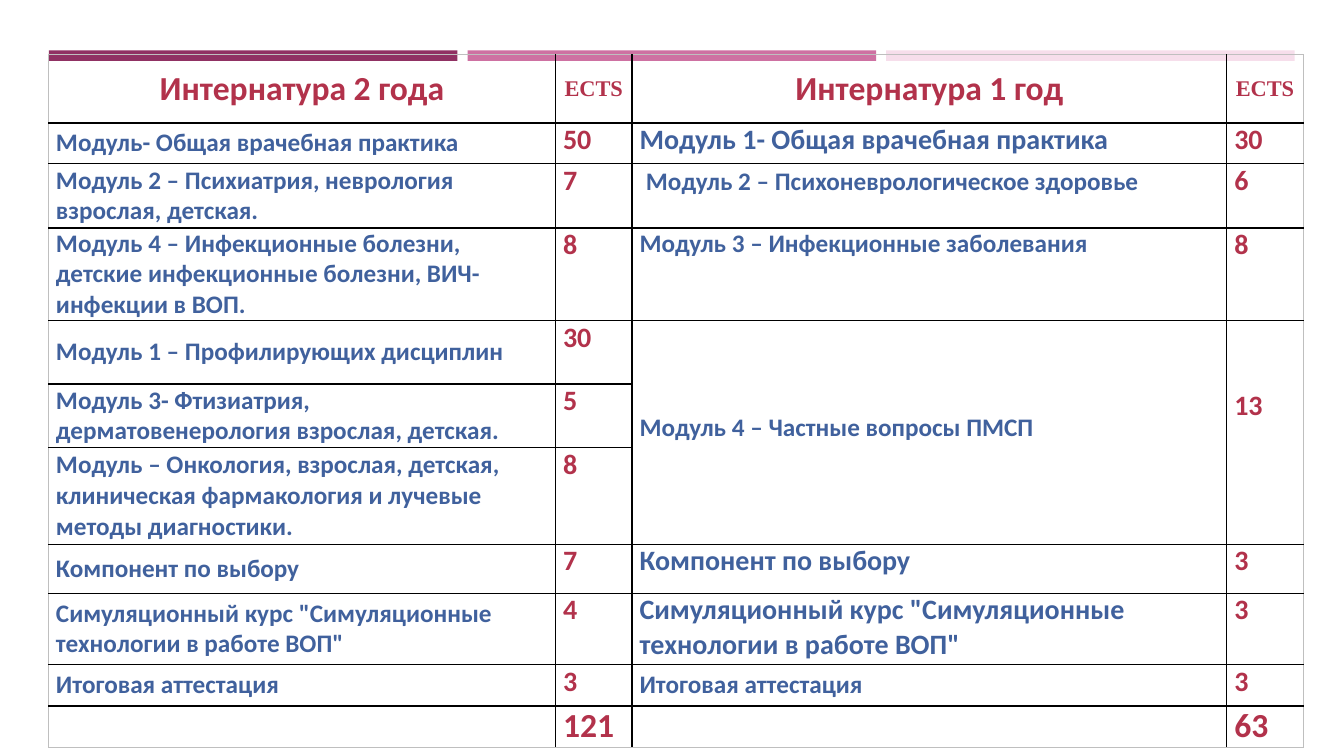
"""Build the slide that compares the two internship plans by ECTS credits."""
from lxml import etree
from pptx import Presentation
from pptx.dml.color import RGBColor
from pptx.enum.shapes import MSO_SHAPE
from pptx.enum.text import MSO_ANCHOR, PP_ALIGN
from pptx.oxml.ns import qn
from pptx.util import Pt

HUES = {"plum": "903163", "rose": "CE71A2", "blush": "F6DEEB",
        "red": "B2324B", "blue": "40619D", "black": "000000", "gray": "BFBFBF"}
COLS = [362.2, 54.7, 424.8, 54.7]
ROWS = [
    (49, "Интернатура 2 года", "ECTS", "Интернатура 1 год", "ECTS"),
    (29, "Модуль- Общая врачебная практика", "50", "Модуль 1- Общая врачебная практика", "30"),
    (46, "Модуль 2 – Психиатрия, неврология взрослая, детская.", "7",
     "Модуль 2 – Психоневрологическое здоровье", "6"),
    (65, "Модуль 4 – Инфекционные болезни, детские инфекционные болезни, ВИЧ-инфекции в ВОП.", "8",
     "Модуль 3 – Инфекционные заболевания", "8"),
    (45.5, "Модуль 1 – Профилирующих дисциплин", "30", "Модуль 4 – Частные вопросы ПМСП", "13"),
    (45.5, "Модуль 3- Фтизиатрия, дерматовенерология взрослая, детская.", "5", "", ""),
    (69, "Модуль – Онкология, взрослая, детская, клиническая фармакология и лучевые методы диагностики.",
     "8", "", ""),
    (35, "Компонент по выбору", "7", "Компонент по выбору", "3"),
    (51, 'Симуляционный курс "Симуляционные технологии в работе ВОП"', "4",
     'Симуляционный курс "Симуляционные технологии в работе ВОП"', "3"),
    (29.5, "Итоговая аттестация", "3", "Итоговая аттестация", "3"),
    (29.5, "", "121", "", "63"),
]
LAST = len(ROWS) - 1
LARGE = (1, 7, 8)


def add_run(para, text, size, hue, face="Calibri"):
    run = para.add_run()
    run.text = text
    run.font.size = Pt(size)
    run.font.bold = True
    run.font.name = face
    run.font.color.rgb = RGBColor.from_string(HUES[hue])


def add_edge(cell, place, side, outer):
    edge = etree.Element(qn(f"a:ln{side}"), w=str(Pt(0.5 if outer else 1)))
    fill = etree.SubElement(edge, qn("a:solidFill"))
    etree.SubElement(fill, qn("a:srgbClr"), val=HUES["gray" if outer else "black"])
    cell._tc.get_or_add_tcPr().insert(place, edge)


deck = Presentation()
deck.slide_width, deck.slide_height = Pt(960), Pt(540)
slide = deck.slides.add_slide(deck.slide_layouts[6])

for num, hue in enumerate(("plum", "rose", "blush")):
    bar = slide.shapes.add_shape(MSO_SHAPE.RECTANGLE, Pt(35 + 299 * num), Pt(36), Pt(291.8), Pt(7.5))
    bar.shadow.inherit = False
    bar.fill.solid()
    bar.fill.fore_color.rgb = RGBColor.from_string(HUES[hue])
    bar.line.fill.background()

frame = slide.shapes.add_table(len(ROWS), len(COLS), Pt(34.6), Pt(38.9),
                               Pt(sum(COLS)), Pt(sum(row[0] for row in ROWS)))
table = frame.table
table.first_row = table.horz_banding = False
for col, width in zip(table.columns, COLS):
    col.width = Pt(width)

for r, (height, *texts) in enumerate(ROWS):
    table.rows[r].height = Pt(height)
    for c, text in enumerate(texts):
        cell = table.cell(r, c)
        cell.margin_left = cell.margin_right = Pt(5.4)
        cell.margin_top = cell.margin_bottom = 0
        cell.fill.background()
        outer = {"L": c == 0, "R": c == 3, "T": r == 0, "B": r == LAST}
        for place, side in enumerate(outer):
            add_edge(cell, place, side, outer[side])
        if not text:
            continue
        para = cell.text_frame.paragraphs[0]
        score = c % 2 == 1
        if r == 0 or c == 0 or (r == 9 and c == 2):
            cell.vertical_anchor = MSO_ANCHOR.MIDDLE
        if r == 0:
            para.alignment = PP_ALIGN.CENTER
            add_run(para, text, 16 if score else 24, "red", "Times New Roman" if score else "Calibri")
        elif score:
            add_run(para, text, 24 if r == LAST else 20, "red")
        else:
            if (r, c) == (2, 2):
                add_run(para, " ", 20, "blue")
            add_run(para, text, 20 if c == 2 and r in LARGE else 18, "blue")

for c, drop in ((2, 66), (3, 48.8)):
    table.cell(4, c).merge(table.cell(6, c))
    table.cell(4, c).margin_top = Pt(drop)

deck.save("out.pptx")
